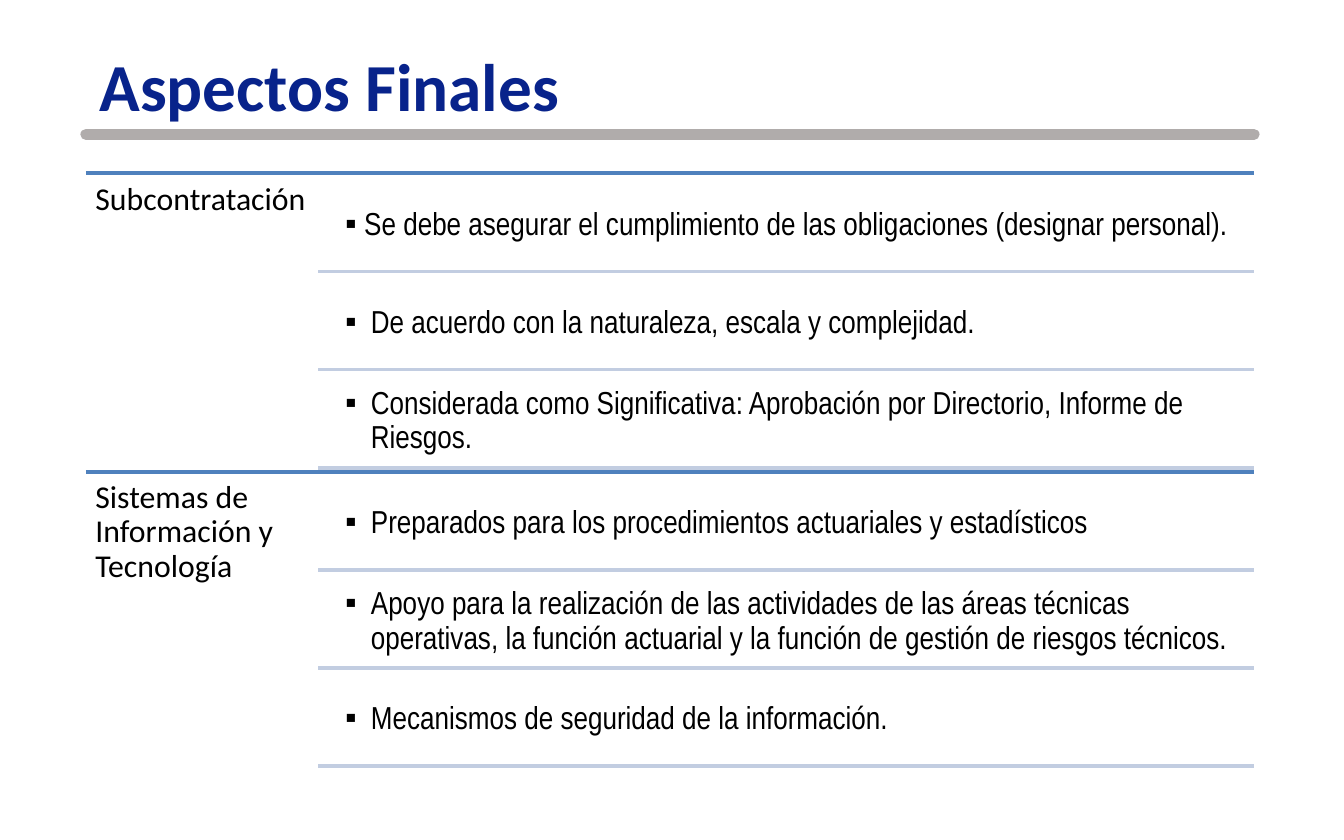
from lxml import etree
from pptx import Presentation, util as u
from pptx.dml.color import RGBColor
from pptx.enum import text as t
from pptx.oxml.ns import qn

INK = {"title": "08238B", "bar": "B0ACAB", "head": "4F81BD",
       "rule": "C2CDE1", "text": "000000"}
LEFT, MID, RIGHT = 0.64, 2.37, 9.33   # column edges
TOP, BAND, ROW, GAP = 1.29, 2.22, 0.73, 0.04
INSET, HANG, TIGHT = 0.07, 0.19, 0.14

TOPICS = [
    ("Subcontratación", [
        ("Se debe asegurar el cumplimiento de las obligaciones (designar personal).", TIGHT),
        ("De acuerdo con la naturaleza, escala y complejidad.", HANG),
        ("Considerada como Significativa: Aprobación por Directorio, Informe de Riesgos.", HANG),
    ]),
    ("Sistemas de Información y Tecnología", [
        ("Preparados para los procedimientos actuariales y estadísticos", HANG),
        ("Apoyo para la realización de las actividades de las áreas técnicas operativas, "
         "la función actuarial y la función de gestión de riesgos técnicos.", HANG),
        ("Mecanismos de seguridad de la información.", HANG),
    ]),
]

prs = Presentation()
prs.slide_width, prs.slide_height = u.Inches(10), u.Inches(6.25)
slide = prs.slides.add_slide(prs.slide_layouts[5])


def rule(left, y, ink, width):
    """Draw a level line from left to the right edge of the grid."""
    line = slide.shapes.add_connector(
        1, u.Inches(left), u.Inches(y), u.Inches(RIGHT), u.Inches(y))
    line.line.color.rgb = RGBColor.from_string(INK[ink])
    line.line.width = u.Pt(width)
    etree.SubElement(line._element.spPr, qn("a:effectLst"))
    return line


def label(left, top, width, height, words, font, anchor):
    """Add a wrapped text box and return its paragraph."""
    box = slide.shapes.add_textbox(*map(u.Inches, (left, top, width, height)))
    frame = box.text_frame
    frame.word_wrap = True
    frame.vertical_anchor = anchor
    frame.margin_left = frame.margin_right = u.Inches(INSET)
    frame.margin_top = frame.margin_bottom = u.Inches(INSET)
    para = frame.paragraphs[0]
    para.line_spacing = 0.9
    run = para.add_run()
    run.text = words
    run.font.name, run.font.size = font, u.Pt(17)
    run.font.color.rgb = RGBColor.from_string(INK["text"])
    return para


# Title and the round-ended bar below it
title = slide.shapes.title
title.left, title.top = u.Inches(LEFT), u.Inches(0.28)
title.width, title.height = u.Inches(8.7), u.Inches(0.71)
title.text_frame.vertical_anchor = t.MSO_ANCHOR.TOP
title.text_frame.auto_size = t.MSO_AUTO_SIZE.NONE
para = title.text_frame.paragraphs[0]
para.alignment = t.PP_ALIGN.LEFT
run = para.add_run()
run.text = "Aspectos Finales"
run.font.name, run.font.size, run.font.bold = "Calibri", u.Pt(36), True
run.font.color.rgb = RGBColor.from_string(INK["title"])
bar = rule(LEFT, 1, "bar", 6)
bar.line._get_or_add_ln().set("cap", "rnd")

# One band per topic, one row per point
for band, (topic, points) in enumerate(TOPICS):
    top = TOP + band * BAND
    rule(LEFT, top, "head", 2)
    label(LEFT, top, MID - LEFT, BAND, topic, "Calibri", t.MSO_ANCHOR.TOP)
    for row, (point, hang) in enumerate(points):
        y = top + row * ROW
        para = label(2.5, y + GAP, RIGHT - 2.5, ROW - GAP, point,
                     "Arial Narrow", t.MSO_ANCHOR.MIDDLE)
        props = para._p.get_or_add_pPr()
        props.set("marL", str(u.Inches(hang)))
        props.set("indent", str(-u.Inches(hang)))
        etree.SubElement(props, qn("a:buFont"), typeface="Calibri")
        etree.SubElement(props, qn("a:buChar"), char="▪")
        rule(MID, y + ROW, "rule", 2)

prs.save("out.pptx")
